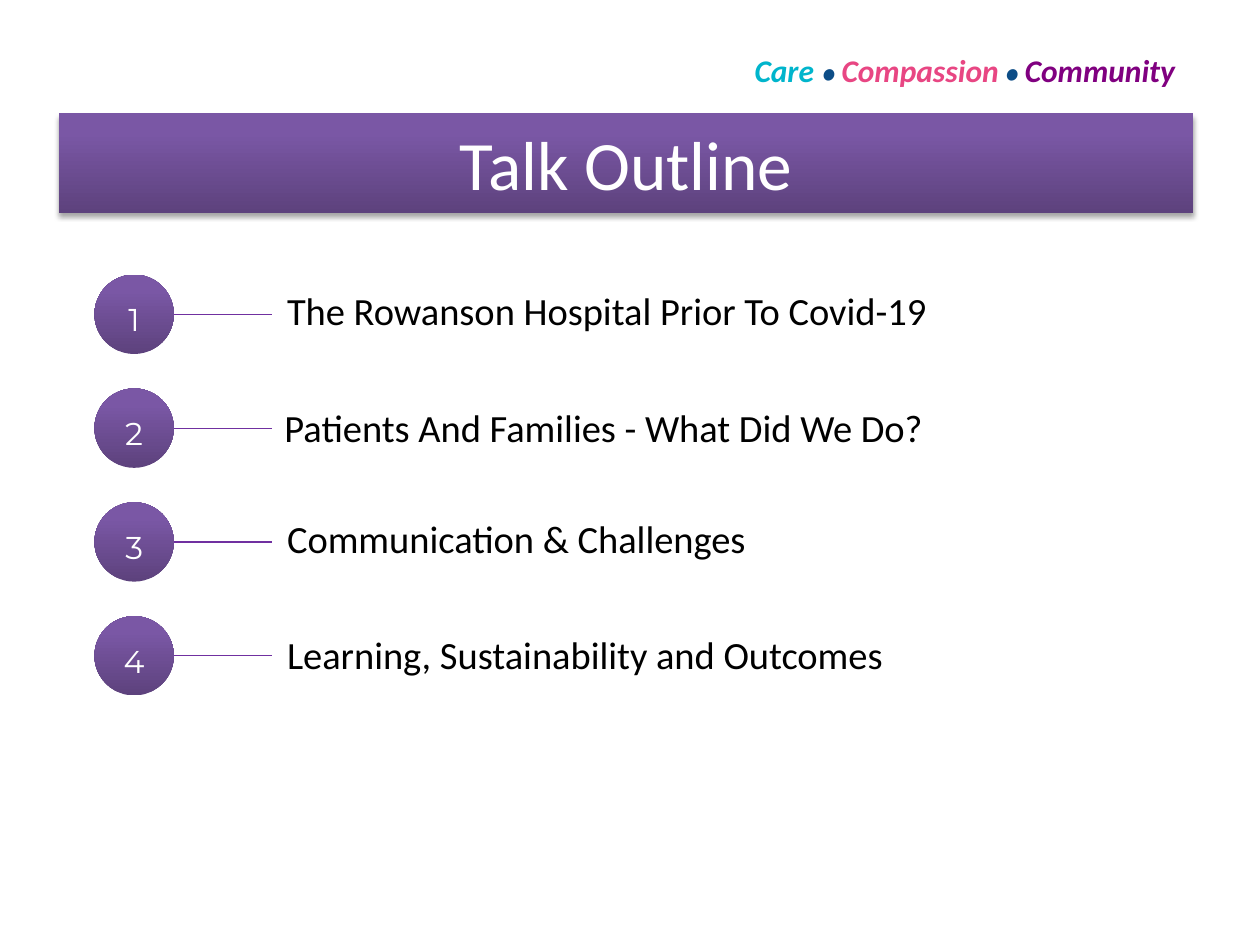
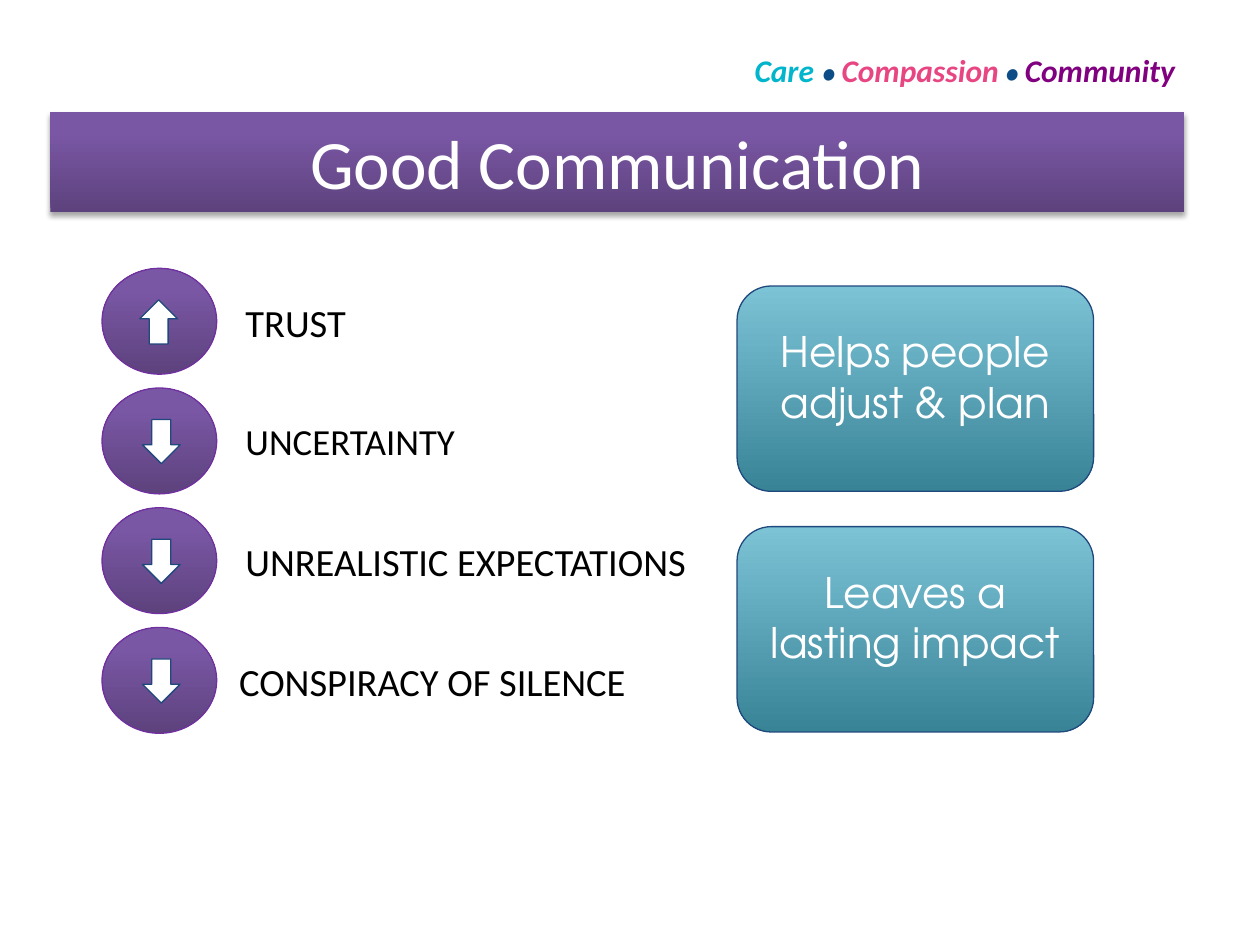
from copy import deepcopy
from dataclasses import dataclass

from lxml import etree
from pptx import Presentation
from pptx import util as u
from pptx.dml.color import RGBColor
from pptx.enum import shapes, text
from pptx.oxml.ns import qn

COLORS = {
    "white": "FFFFFF",
    "black": "000000",
    "purple": "7030A0",
    "navy": "1F497D",
    "care": "00B5CC",
    "dot": "0D4D87",
    "compassion": "E84683",
    "community": "800080",
}
# Gradients as (position, colour) stops with an angle counted anticlockwise
PURPLE_FADE = ([(0, "5D427D"), (0.8, "7A57A5"), (1, "7A56A7")], 90)
TEAL_FADE = ([(0, "7DC3D6"), (1, "398397")], 270)
TAGLINE = [
    ("Care ", 18, "care"),
    ("● ", 14, "dot"),
    ("Compassion", 18, "compassion"),
    (" ● ", 14, "dot"),
    ("Community", 18, "community"),
]
BODY_FONT, NUMBER_FONT, CARD_FONT = "Calibri", "Montserrat", "TeX Gyre Adventor"


@dataclass
class Box:
    left: float
    top: float
    width: float
    height: float

    def lengths(self) -> list:
        return [u.Inches(v) for v in (self.left, self.top, self.width, self.height)]


@dataclass
class Topic:
    label: str
    left: float
    top: float


@dataclass
class Effect:
    label: str
    rises: bool
    left: float = 1.85
    width: float = 4.3
    size: float = 22


TOPICS = [
    Topic("The Rowanson Hospital Prior To Covid-19", 2.18, 2.18),
    Topic("Patients And Families - What Did We Do?", 2.16, 3.11),
    Topic("Communication & Challenges", 2.18, 3.99),
    Topic("Learning, Sustainability and Outcomes", 2.18, 4.91),
]
EFFECTS = [
    Effect("TRUST", True, width=1.54),
    Effect("UNCERTAINTY", False, width=2.27, size=21),
    Effect("UNREALISTIC EXPECTATIONS", False),
    Effect("CONSPIRACY OF SILENCE", False, left=1.8),
]
CARDS = ["Helps people adjust & plan", "Leaves a lasting impact"]


def rgb(name: str) -> RGBColor:
    return RGBColor.from_string(COLORS[name])


def style_font(font, name: str, size: float, color: str) -> None:
    font.name, font.size = name, u.Pt(size)
    font.color.rgb = rgb(color)


def set_insets(tf, x: float, y: float) -> None:
    tf.margin_left = tf.margin_right = u.Inches(x)
    tf.margin_top = tf.margin_bottom = u.Inches(y)


def fill_gradient(sp, gradient: tuple) -> None:
    stops, angle = gradient
    sp.fill.gradient()
    sp.fill.gradient_angle = angle
    gs_lst = sp._element.spPr.find(qn("a:gradFill")).find(qn("a:gsLst"))
    while len(gs_lst) < len(stops):
        gs_lst.append(deepcopy(gs_lst[-1]))
    for stop, (position, color) in zip(sp.fill.gradient_stops, stops):
        stop.position = position
        stop.color.rgb = RGBColor.from_string(color)


def add_preset(parent, kind, box: Box, gradient: tuple | None = None,
               line: str | None = None):
    """Add a preset shape, white unless a gradient is given."""
    sp = parent.shapes.add_shape(kind, *box.lengths())
    sp.shadow.inherit = False
    if gradient:
        fill_gradient(sp, gradient)
    else:
        sp.fill.solid()
        sp.fill.fore_color.rgb = rgb("white")
    if line:
        sp.line.color.rgb = rgb(line)
        sp.line.width = u.Pt(0.75)
    else:
        sp.line.fill.background()
    return sp


def write(sp, content: str, font: str, size: float, color: str,
          inset: tuple = (0.1, 0.1), centred: bool = False):
    """Put one wrapped paragraph in a shape and return the paragraph."""
    tf = sp.text_frame
    tf.word_wrap = True
    set_insets(tf, *inset)
    tf.text = content
    p = tf.paragraphs[0]
    p.alignment = text.PP_ALIGN.CENTER if centred else text.PP_ALIGN.LEFT
    style_font(p.runs[0].font, font, size, color)
    return p


def add_label(s, content: str, box: Box, size: float = 22) -> None:
    write(s.shapes.add_textbox(*box.lengths()), content, BODY_FONT, size, "black")


def add_tagline(s) -> None:
    tf = s.shapes.add_textbox(*Box(5.89, 0.36, 3.58, 0.4).lengths()).text_frame
    tf.word_wrap = True
    set_insets(tf, 0.1, 0.05)
    for content, size, color in TAGLINE:
        r = tf.paragraphs[0].add_run()
        r.text = content
        style_font(r.font, BODY_FONT, size, color)
        r.font.bold = r.font.italic = True


def add_title_band(s, title: str, left: float, top: float) -> None:
    sp = add_preset(s, shapes.MSO_SHAPE.RECTANGLE, Box(left, top, 9, 0.79), PURPLE_FADE)
    effects = sp._element.spPr.find(qn("a:effectLst"))
    shadow = etree.SubElement(effects, qn("a:outerShdw"), blurRad=str(u.Pt(3.1)),
                              dist=str(u.Pt(1.8)), dir="5400000", rotWithShape="0")
    color = etree.SubElement(shadow, qn("a:srgbClr"), val=COLORS["black"])
    etree.SubElement(color, qn("a:alpha"), val="35000")
    write(sp, title, BODY_FONT, 39.6, "white", (0.1, 0.05), centred=True)


def add_slide(prs, title: str, left: float, top: float):
    s = prs.slides.add_slide(prs.slide_layouts[6])
    add_tagline(s)
    add_title_band(s, title, left, top)
    return s


def add_topic(s, number: int, topic: Topic) -> None:
    """Draw a numbered circle with a line leading to its topic."""
    size, first, last = 0.63, 2.18, 4.89
    top = first + (last - first) / (len(TOPICS) - 1) * (number - 1)
    middle = u.Inches(top + size / 2)
    line = s.shapes.add_connector(shapes.MSO_CONNECTOR.STRAIGHT,
                                  u.Inches(1.37), middle, u.Inches(2.16), middle)
    line.line.color.rgb = rgb("purple")
    line.line.width = u.Pt(0.75)
    etree.SubElement(line._element.spPr, qn("a:effectLst"))
    add_preset(s, shapes.MSO_SHAPE.OVAL, Box(0.75, top, size, size), PURPLE_FADE)
    digit = s.shapes.add_textbox(*Box(0.93, top + 0.16, 0.27, 0.26).lengths())
    p = write(digit, str(number), NUMBER_FONT, 18, "white", (0, 0), centred=True)
    p.line_spacing = 1.15
    add_label(s, topic.label, Box(topic.left, topic.top, 5.63, 0.57))


def add_effect(s, row: int, effect: Effect) -> None:
    """Draw a circled arrow, up or down, with its label."""
    top = 2.13 + 0.95 * row
    badge = s.shapes.add_group_shape()
    add_preset(badge, shapes.MSO_SHAPE.OVAL, Box(0.81, top, 0.91, 0.84),
               PURPLE_FADE, "purple")
    arrow = add_preset(badge, shapes.MSO_SHAPE.UP_ARROW,
                       Box(1.11 if effect.rises else 1.13, top + 0.25, 0.3, 0.35),
                       line="navy")
    arrow.rotation = 0 if effect.rises else 180
    add_label(s, effect.label, Box(effect.left, top + 0.14, effect.width, 0.57),
              effect.size)


def add_card(s, row: int, content: str) -> None:
    box = Box(5.85, 2.27 + 1.91 * row, 2.83, 1.63)
    sp = add_preset(s, shapes.MSO_SHAPE.ROUNDED_RECTANGLE, box, TEAL_FADE, "navy")
    write(sp, content, CARD_FONT, 24, "white", centred=True)
    sp.text_frame.margin_bottom = u.Inches(0.3)


def main() -> None:
    prs = Presentation()
    prs.slide_width, prs.slide_height = u.Inches(10), u.Inches(7.5)

    s = add_slide(prs, "Talk Outline", 0.47, 0.9)
    for number, topic in enumerate(TOPICS, 1):
        add_topic(s, number, topic)

    s = add_slide(prs, "Good Communication", 0.4, 0.89)
    for row, effect in enumerate(EFFECTS):
        add_effect(s, row, effect)
    for row, content in enumerate(CARDS):
        add_card(s, row, content)

    prs.save("out.pptx")


if __name__ == "__main__":
    main()
